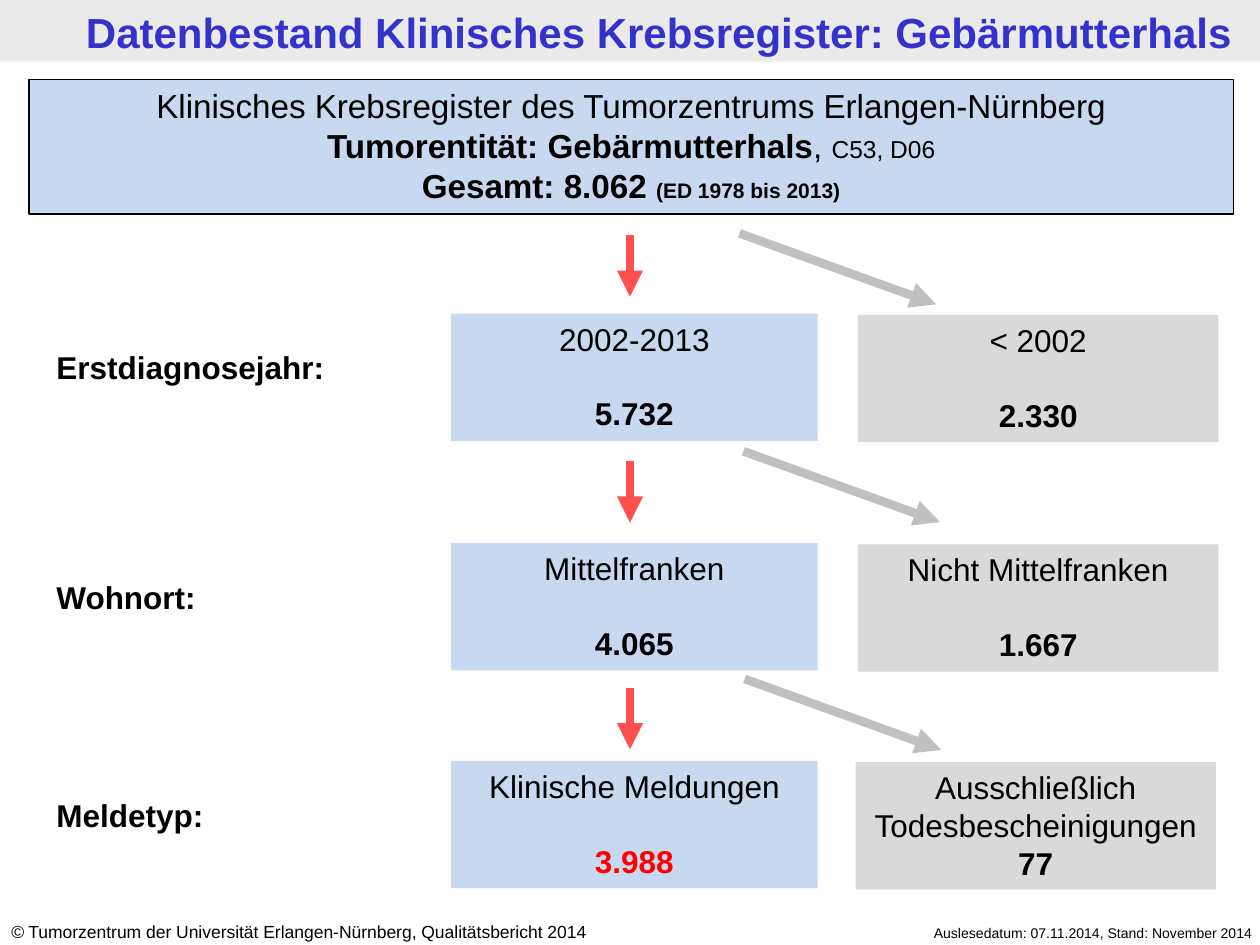
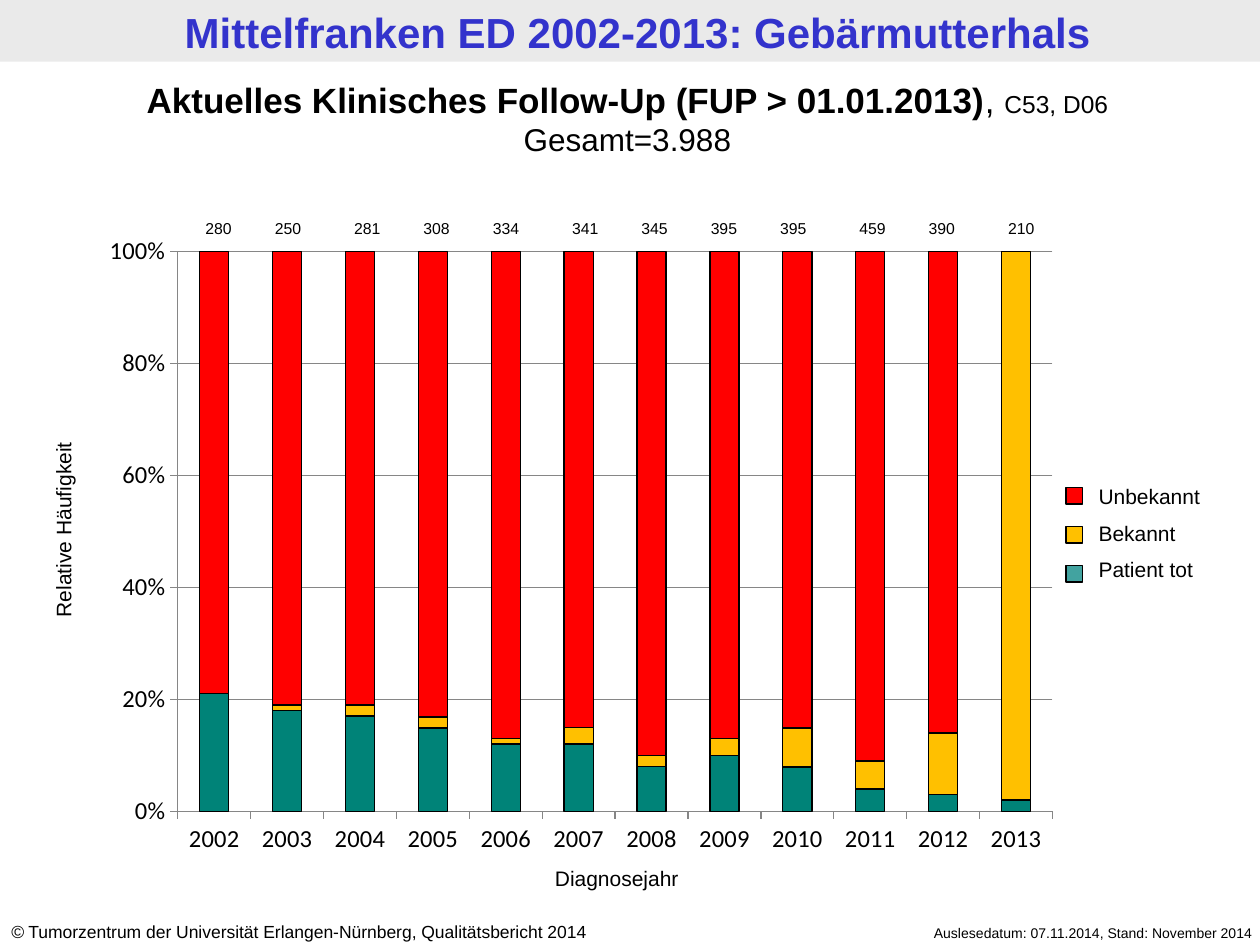
"""Build two slides on the cervical cancer data of a clinical cancer registry."""
import pptx
import pptx.chart.data
import pptx.dml.color
import pptx.enum.chart
import pptx.enum.shapes
import pptx.enum.text
import pptx.oxml
import pptx.oxml.ns
import pptx.util
from lxml import etree

RGBColor = pptx.dml.color.RGBColor
BLACK = RGBColor(0x00, 0x00, 0x00)
TITLE_BLUE = RGBColor(0x33, 0x33, 0xCC)
BAND_GREY = RGBColor(0xEA, 0xEA, 0xEA)
LIGHT_BLUE = RGBColor(0xC6, 0xD9, 0xF1)
LIGHT_GREY = RGBColor(0xD9, 0xD9, 0xD9)
ARROW_RED = RGBColor(0xFF, 0x50, 0x50)
ARROW_GREY = RGBColor(0xC0, 0xC0, 0xC0)
AXIS_GREY = RGBColor(0x86, 0x86, 0x86)
RED = RGBColor(0xFF, 0x00, 0x00)
YELLOW = RGBColor(0xFF, 0xC0, 0x00)
TEAL = RGBColor(0x00, 0x83, 0x78)
SWATCH_TEAL = RGBColor(0x00, 0x83, 0x80)
LEFT, CENTER, RIGHT = (pptx.enum.text.PP_ALIGN.LEFT, pptx.enum.text.PP_ALIGN.CENTER,
                       pptx.enum.text.PP_ALIGN.RIGHT)
Pt = pptx.util.Pt

prs = pptx.Presentation()
prs.slide_width = pptx.util.Inches(10)
prs.slide_height = pptx.util.Inches(7.5)
COL = prs.slide_width / 100
ROW = prs.slide_height / 100


def add_box(s, x, y, w, h, fill=None, line=None):
    """Add a rectangle, or a text box if there is no fill, in grid units."""
    place = int(x * COL), int(y * ROW), int(w * COL), int(h * ROW)
    if fill is None:
        return s.shapes.add_textbox(*place)
    sp = s.shapes.add_shape(pptx.enum.shapes.MSO_SHAPE.RECTANGLE, *place)
    sp.shadow.inherit = False
    sp.fill.solid()
    sp.fill.fore_color.rgb = fill
    if line is None:
        sp.line.fill.background()
    else:
        sp.line.color.rgb = line
        sp.line.width = Pt(0.75)
    return sp


def write(sp, align, size, paragraphs, bold=False, color=BLACK, gap=0):
    """Write paragraphs, each a list of (text, font settings that differ)."""
    tf = sp.text_frame
    tf.word_wrap = True
    tf.vertical_anchor = pptx.enum.text.MSO_ANCHOR.TOP
    for i, runs in enumerate(paragraphs):
        p = tf.paragraphs[0] if i == 0 else tf.add_paragraph()
        p.alignment = align
        if i and gap:
            p.space_before = Pt(gap)
        p.font.name = "Arial"
        p.font.size = Pt(size)
        p.font.bold = bold
        p.font.color.rgb = color
        for text, settings in runs:
            r = p.add_run()
            r.text = text
            for key, value in settings.items():
                if key == "color":
                    r.font.color.rgb = value
                else:
                    setattr(r.font, key, value)


slides = []
for title, left in [("Datenbestand Klinisches Krebsregister: Gebärmutterhals", 4.6),
                    ("Mittelfranken ED 2002-2013: Gebärmutterhals", 1.2)]:
    s = prs.slides.add_slide(prs.slide_layouts[6])
    slides.append(s)
    add_box(s, 0, 0, 100, 6.53, BAND_GREY)
    sp = add_box(s, left, 0.13, 100 - left, 6.5)
    sp.text_frame.margin_top = Pt(3)
    write(sp, CENTER, 24, [[(title, {})]], True, TITLE_BLUE)
    write(add_box(s, 66.5, 97.2, 33.9, 3.2), RIGHT, 8,
          [[("Auslesedatum: 07.11.2014, Stand: November 2014", {})]])
    write(add_box(s, -0.1, 96.8, 52.4, 3.6), LEFT, 10,
          [[("©", {"italic": True}),
            (" Tumorzentrum der Universität Erlangen-Nürnberg, Qualitätsbericht 2014", {})]])

s = slides[0]
BOLD = {"bold": True}
write(add_box(s, 2.3, 8.4, 95.6, 14.27, LIGHT_BLUE, BLACK), CENTER, 19, [
    [("Klinisches Krebsregister des Tumorzentrums Erlangen-Nürnberg", {})],
    [("Tumorentität: Gebärmutterhals", BOLD), (", ", {}), ("C53, D06", {"size": Pt(14)})],
    [("Gesamt: 8.062 ", BOLD), ("(ED 1978 bis 2013)", {"bold": True, "size": Pt(12)})]])

steps = [
    ("Erstdiagnosejahr:", 33.2, "2002-2013", "5.732", BLACK, "< 2002", "2.330", 21, 68.1,
     24.9, 58.7, 24.7),
    ("Wohnort:", 57.47, "Mittelfranken", "4.065", BLACK, "Nicht Mittelfranken", "1.667", 21, 68.1,
     48.8, 59, 47.75),
    ("Meldetyp:", 80.53, "Klinische Meldungen", "3.988", RED,
     "Ausschließlich Todesbescheinigungen", "77", 0, 67.9, 72.8, 59.1, 71.85),
]
for label, y, kept, n_kept, color, dropped, n_dropped, gap, x_dropped, y_red, x_grey, y_grey in steps:
    write(add_box(s, 3.5, y + 3, 27.6, 5.4), LEFT, 18, [[(label, {})]], True)
    write(add_box(s, 35.8, y, 29.1, 13.47, LIGHT_BLUE), CENTER, 18,
          [[(kept, {})], [(n_kept, {"bold": True, "color": color})]], gap=21)
    write(add_box(s, x_dropped, y + 0.13, 28.6, 13.47, LIGHT_GREY), CENTER, 18,
          [[(dropped, {})], [(n_dropped, BOLD)]], gap=gap)
    for x, top, dx, dy, arrow_color in [(50, y_red, 0, 6.5, ARROW_RED),
                                        (x_grey, y_grey, 15.6, 7.5, ARROW_GREY)]:
        arrow = s.shapes.add_connector(pptx.enum.shapes.MSO_CONNECTOR.STRAIGHT, int(x * COL),
                                       int(top * ROW), int((x + dx) * COL), int((top + dy) * ROW))
        arrow.line.color.rgb = arrow_color
        arrow.line.width = Pt(5)
        ln = arrow.line._get_or_add_ln()
        etree.SubElement(ln, pptx.oxml.ns.qn("a:tailEnd"), type="triangle")
        etree.SubElement(arrow._element.spPr, pptx.oxml.ns.qn("a:effectLst"))

s = slides[1]
series = [
    ("Patient tot", TEAL, (21, 18, 17, 15, 12, 12, 8, 10, 8, 4, 3, 2)),
    ("Bekannt", YELLOW, (0, 1, 2, 2, 1, 3, 2, 3, 7, 5, 11, 98)),
    ("Unbekannt", RED, (79, 81, 81, 84, 87, 85, 90, 87, 86, 91, 86, 0)),
]
data = pptx.chart.data.CategoryChartData()
data.categories = [str(year) for year in range(2002, 2014)]
for name, color, values in series:
    data.add_series(name, values)
chart = s.shapes.add_chart(pptx.enum.chart.XL_CHART_TYPE.COLUMN_STACKED_100, int(7.1 * COL),
                           int(23.87 * ROW), int(78 * COL), int(68.13 * ROW), data).chart
chart.has_legend = False
chart.has_title = False
chart.font.name = "Calibri"
chart.font.size = Pt(14)
chart.font.color.rgb = BLACK
plot = chart.plots[0]
plot.gap_width = 150
plot.overlap = 100
plot.vary_by_categories = False
for ser, (name, color, values) in zip(plot.series, series):
    ser.format.fill.solid()
    ser.format.fill.fore_color.rgb = color
    ser.format.line.color.rgb = BLACK
    ser.format.line.width = Pt(0.75)
for axis in (chart.category_axis, chart.value_axis):
    axis.major_tick_mark = pptx.enum.chart.XL_TICK_MARK.OUTSIDE
    axis.minor_tick_mark = pptx.enum.chart.XL_TICK_MARK.NONE
    axis.format.line.color.rgb = AXIS_GREY
    axis.tick_labels.font.size = Pt(14)
axis = chart.value_axis
axis.minimum_scale, axis.maximum_scale, axis.major_unit = 0, 1, 0.2
axis.has_major_gridlines = True
axis.major_gridlines.format.line.color.rgb = AXIS_GREY
axis.tick_labels.number_format = "0%"
axis.tick_labels.number_format_is_linked = False
plot_area = chart._chartSpace.chart.plotArea
for old in plot_area.findall(pptx.oxml.ns.qn("c:layout")):
    plot_area.remove(old)
plot_area.insert(0, pptx.oxml.parse_xml(
    f'<c:layout {pptx.oxml.ns.nsdecls("c")}><c:manualLayout><c:layoutTarget val="inner"/>'
    '<c:xMode val="edge"/><c:yMode val="edge"/><c:x val="0.09"/><c:y val="0.04"/>'
    '<c:w val="0.89"/><c:h val="0.87"/></c:manualLayout></c:layout>'))

write(add_box(s, -0.4, 7.6, 100.4, 9.87), CENTER, 20, [
    [("Aktuelles Klinisches Follow-Up (FUP > 01.01.2013)", BOLD), (", ", {}),
     ("C53, D06", {"size": Pt(14)})],
    [("Gesamt=3.988", {"size": Pt(18)})]])
sp = add_box(s, -7, 54, 24.1, 4.13)
sp.rotation = 270
write(sp, CENTER, 12, [[("Relative Häufigkeit", {})]])
write(add_box(s, 37.7, 90.93, 22.5, 4.13), CENTER, 12, [[("Diagnosejahr", {})]])

totals = [(14.6, 280), (20.1, 250), (26.4, 281), (31.9, 308), (37.4, 334), (43.7, 341),
          (49.2, 345), (54.7, 395), (60.2, 395), (66.5, 459), (72, 390), (78.3, 210)]
for x, total in totals:
    write(add_box(s, x, 22.45, 5.5, 3.33), CENTER, 9, [[(str(total), {})]])

write(add_box(s, 86.2, 50.53, 14.2, 12.13), LEFT, 12,
      [[(name, {})] for name, color, values in reversed(series)], gap=6.5)
for i, color in enumerate((RED, YELLOW, SWATCH_TEAL)):
    sp = add_box(s, 84.6, 51.6 + 4.13 * i, 1.3, 1.73, color, BLACK)
clr = sp._element.spPr.find(".//" + pptx.oxml.ns.qn("a:srgbClr"))
etree.SubElement(clr, pptx.oxml.ns.qn("a:alpha"), val="74000")

prs.save("out.pptx")
